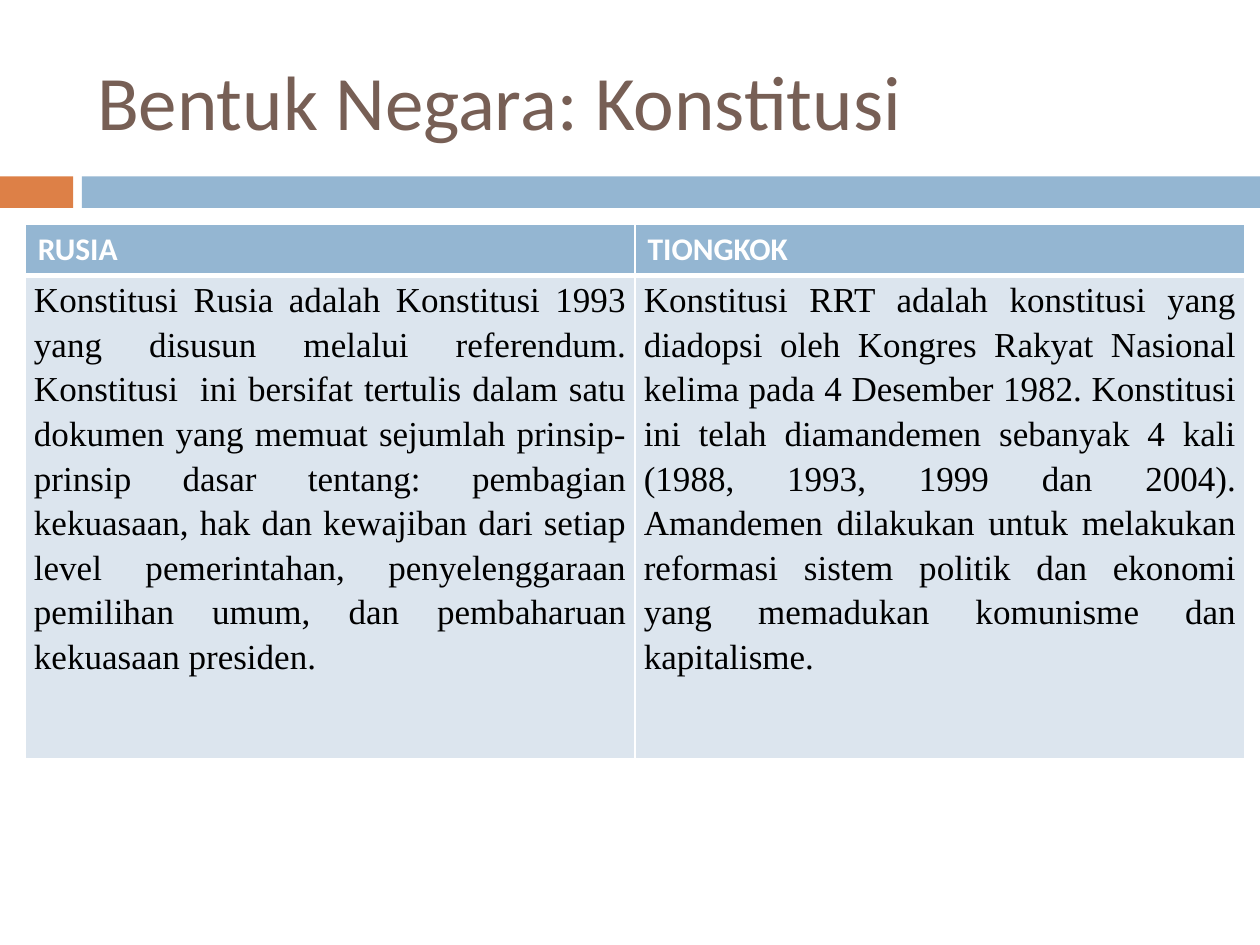
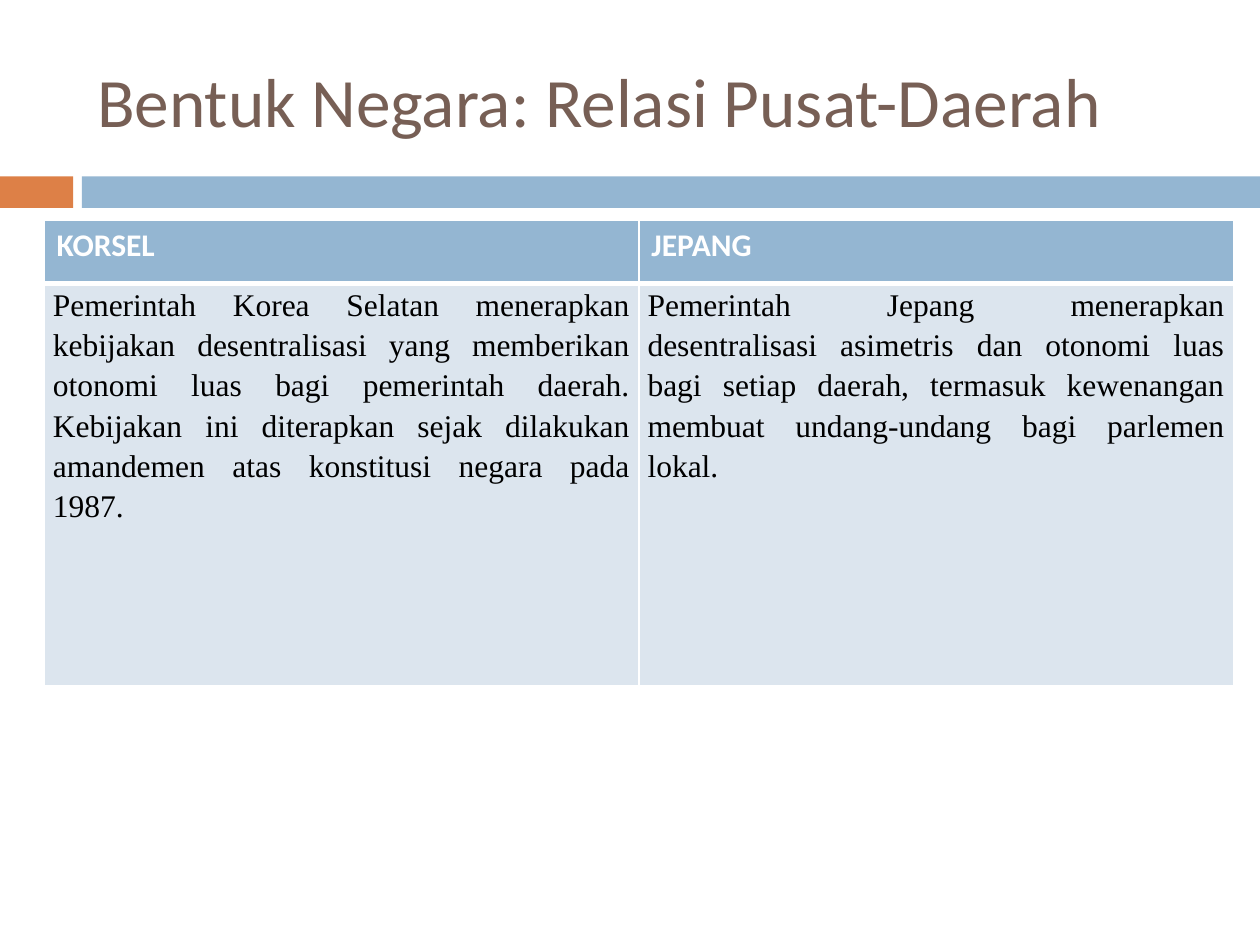
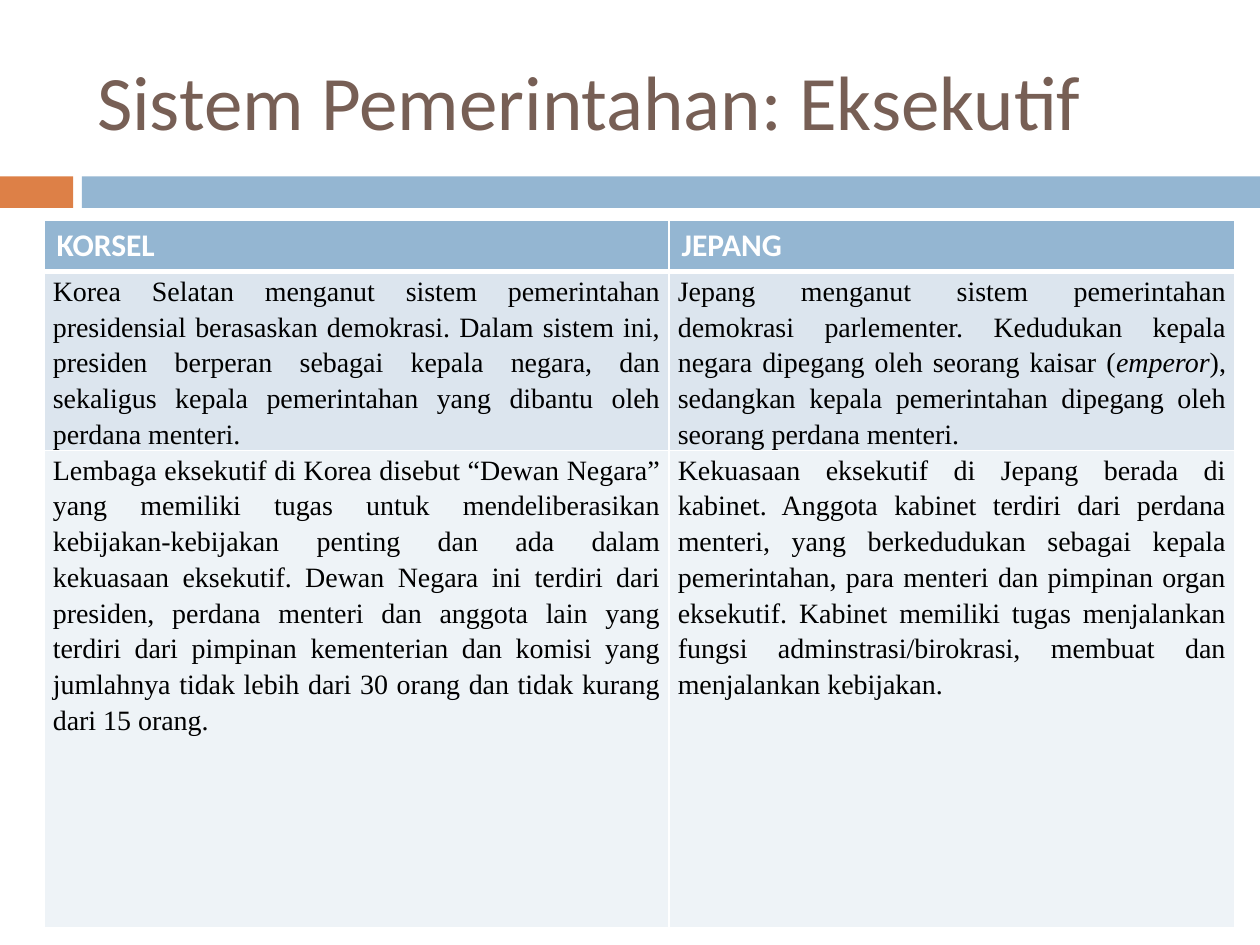
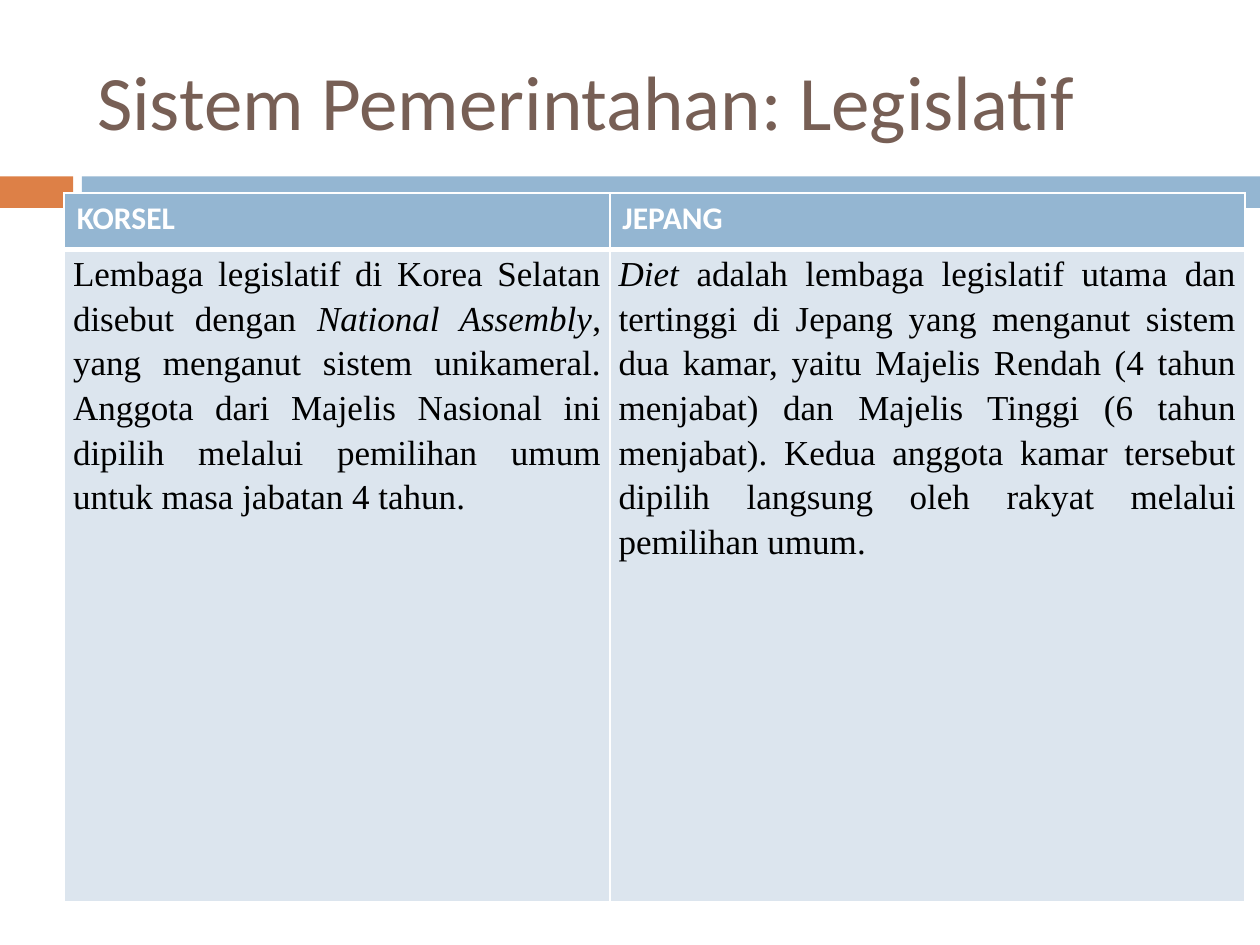
from dataclasses import dataclass

import pptx
import pptx.dml.color
import pptx.enum.shapes
import pptx.enum.text
import pptx.oxml
import pptx.oxml.ns
import pptx.util

Inches = pptx.util.Inches
Pt = pptx.util.Pt
ALIGN = pptx.enum.text.PP_ALIGN


@dataclass(frozen=True)
class Theme:
    orange: str = "DD8047"
    blue: str = "94B6D2"
    brown: str = "775F55"
    white: str = "FFFFFF"
    black: str = "000000"
    body_fills: tuple = ("DCE5EE", "EEF3F7")
    sans: str = "Calibri"
    serif: str = "Times New Roman"
    title_size: float = 44
    head_size: float = 18
    thin: float = 1
    thick: float = 3
    line_spacing: float = 1.15


THEME = Theme()
TITLE_BOX = (0.67, 0.25, 8.92, 1.08)
BANDS = [((0, 1.4, 0.58, 0.25), THEME.orange),
         ((0.65, 1.4, 9.35, 0.25), THEME.blue)]

SLIDES = [
    dict(
        title="Bentuk Negara: Konstitusi",
        origin=(0.2, 1.78), cols=(4.84, 4.84), rows=(0.34, 3.84), size=20,
        cells=[
            ("RUSIA", "TIONGKOK"),
            ("Konstitusi Rusia adalah Konstitusi 1993 yang disusun melalui referendum. "
             "Konstitusi  ini bersifat tertulis dalam satu dokumen yang memuat sejumlah "
             "prinsip-prinsip dasar tentang: pembagian kekuasaan, hak dan kewajiban dari "
             "setiap level pemerintahan, penyelenggaraan pemilihan umum, dan pembaharuan "
             "kekuasaan presiden.",
             "Konstitusi RRT adalah konstitusi yang diadopsi oleh Kongres Rakyat Nasional "
             "kelima pada 4 Desember 1982. Konstitusi ini telah diamandemen sebanyak 4 kali "
             "(1988, 1993, 1999 dan 2004). Amandemen dilakukan untuk melakukan reformasi "
             "sistem politik dan ekonomi yang memadukan komunisme dan kapitalisme."),
        ]),
    dict(
        title="Bentuk Negara: Relasi Pusat-Daerah", title_size=39.6,
        origin=(0.35, 1.75), cols=(4.72, 4.72), rows=(0.5, 3.19), size=18,
        cells=[
            ("KORSEL", "JEPANG"),
            ("Pemerintah Korea Selatan menerapkan kebijakan desentralisasi yang memberikan "
             "otonomi luas bagi pemerintah daerah. Kebijakan ini diterapkan sejak dilakukan "
             "amandemen atas konstitusi negara pada 1987.",
             "Pemerintah Jepang menerapkan desentralisasi asimetris dan otonomi luas bagi "
             "setiap daerah, termasuk kewenangan membuat undang-undang bagi parlemen lokal."),
        ]),
    dict(
        title="Sistem Pemerintahan: Eksekutif",
        origin=(0.35, 1.75), cols=(4.96, 4.49), rows=(0.35, 0.84, 3.79), size=16,
        cells=[
            ("KORSEL", "JEPANG"),
            ("Korea Selatan menganut sistem pemerintahan presidensial berasaskan demokrasi. "
             "Dalam sistem ini, presiden berperan sebagai kepala negara, dan sekaligus kepala "
             "pemerintahan yang dibantu oleh perdana menteri.",
             "Jepang menganut sistem pemerintahan demokrasi parlementer. Kedudukan kepala "
             "negara dipegang oleh seorang kaisar (*emperor*), sedangkan kepala pemerintahan "
             "dipegang oleh seorang perdana menteri."),
            ("Lembaga eksekutif di Korea disebut “Dewan Negara” yang memiliki tugas untuk "
             "mendeliberasikan kebijakan-kebijakan penting dan ada dalam kekuasaan eksekutif. "
             "Dewan Negara ini terdiri dari presiden, perdana menteri dan anggota lain yang "
             "terdiri dari pimpinan kementerian dan komisi yang jumlahnya tidak lebih dari 30 "
             "orang dan tidak kurang dari 15 orang.",
             "Kekuasaan eksekutif di Jepang berada di kabinet. Anggota kabinet terdiri dari "
             "perdana menteri, yang berkedudukan sebagai kepala pemerintahan, para menteri dan "
             "pimpinan organ eksekutif. Kabinet memiliki tugas menjalankan fungsi "
             "adminstrasi/birokrasi, membuat dan menjalankan kebijakan."),
        ]),
    dict(
        title="Sistem Pemerintahan: Legislatif",
        origin=(0.51, 1.53), cols=(4.33, 5.04), rows=(0.45, 5.18), size=20,
        cells=[
            ("KORSEL", "JEPANG"),
            ("Lembaga legislatif di Korea Selatan disebut dengan *National Assembly*, yang "
             "menganut sistem unikameral. Anggota dari Majelis Nasional ini dipilih melalui "
             "pemilihan umum untuk masa jabatan 4 tahun.",
             "*Diet* adalah lembaga legislatif utama dan tertinggi di Jepang yang menganut "
             "sistem dua kamar, yaitu Majelis Rendah (4 tahun menjabat) dan Majelis Tinggi "
             "(6 tahun menjabat). Kedua anggota kamar tersebut dipilih langsung oleh rakyat "
             "melalui pemilihan umum."),
        ]),
]


def rgb(color):
    return pptx.dml.color.RGBColor.from_string(color)


def set_attrs(obj, values):
    for name, value in values.items():
        setattr(obj, name, value)


def write(p, text, font, color):
    """Fill a paragraph; parts between asterisks are italic."""
    for i, part in enumerate(text.split("*")):
        if part:
            r = p.add_run()
            r.text = part
            set_attrs(r.font, font)
            r.font.italic = i % 2 == 1
            r.font.color.rgb = rgb(color)


def add_bands(s, layout):
    """Draw the bands on a slide, then move them to the back of its layout."""
    for i, (box, color) in enumerate(BANDS):
        sp = s.shapes.add_shape(pptx.enum.shapes.MSO_SHAPE.RECTANGLE,
                                *map(Inches, box))
        sp.shadow.inherit = False
        sp.fill.solid()
        sp.fill.fore_color.rgb = rgb(color)
        sp.line.fill.background()
        layout.shapes.element.insert(2 + i, sp.element)


def add_title(s, text, size, box):
    sp = s.shapes.title
    set_attrs(sp, dict(zip(("left", "top", "width", "height"), map(Inches, box))))
    tf = sp.text_frame
    set_attrs(tf, dict(word_wrap=True, auto_size=pptx.enum.text.MSO_AUTO_SIZE.NONE,
                       vertical_anchor=pptx.enum.text.MSO_ANCHOR.MIDDLE))
    p = tf.paragraphs[0]
    p.alignment = ALIGN.LEFT
    write(p, text, dict(name=THEME.sans, size=Pt(size), bold=False), THEME.brown)


def set_borders(cell, bottom):
    tcPr = cell._tc.get_or_add_tcPr()
    widths = dict(lnL=THEME.thin, lnR=THEME.thin, lnT=THEME.thin, lnB=bottom)
    for i, (tag, width) in enumerate(widths.items()):
        tcPr.insert(i, pptx.oxml.parse_xml(
            f'<a:{tag} {pptx.oxml.ns.nsdecls("a")} w="{Pt(width)}"><a:solidFill>'
            f'<a:srgbClr val="{THEME.white}"/></a:solidFill></a:{tag}>'))


def format_cell(cell, text, row, size):
    p = cell.text_frame.paragraphs[0]
    if row == 0:
        fill, bottom, color = THEME.blue, THEME.thick, THEME.white
        font = dict(name=THEME.sans, size=Pt(THEME.head_size), bold=True)
    else:
        fill, bottom, color = THEME.body_fills[row - 1], THEME.thin, THEME.black
        font = dict(name=THEME.serif, size=Pt(size), bold=False)
        set_attrs(cell, dict(margin_left=Inches(0.07), margin_right=Inches(0.07),
                             margin_top=0, margin_bottom=0))
        set_attrs(p, dict(alignment=ALIGN.JUSTIFY, line_spacing=THEME.line_spacing))
    write(p, text, font, color)
    cell.fill.solid()
    cell.fill.fore_color.rgb = rgb(fill)
    set_borders(cell, bottom)


def add_comparison(s, origin, cols, rows, cells, size):
    box = (*origin, sum(cols), sum(rows))
    table = s.shapes.add_table(len(rows), len(cols), *map(Inches, box)).table
    for column, width in zip(table.columns, cols):
        column.width = Inches(width)
    for i, (row, height) in enumerate(zip(table.rows, rows)):
        row.height = Inches(height)
        for cell, text in zip(row.cells, cells[i]):
            format_cell(cell, text, i, size)


def add_comparison_slide(prs, layout, title, title_size=THEME.title_size, **table):
    s = prs.slides.add_slide(layout)
    add_title(s, title, title_size, TITLE_BOX)
    add_comparison(s, **table)
    return s


def main():
    prs = pptx.Presentation()
    set_attrs(prs, dict(slide_width=Inches(10), slide_height=Inches(7.5)))
    layout = prs.slide_layouts.get_by_name("Title Only")
    slides = [add_comparison_slide(prs, layout, **content) for content in SLIDES]
    add_bands(slides[0], layout)
    prs.save("out.pptx")


if __name__ == "__main__":
    main()
